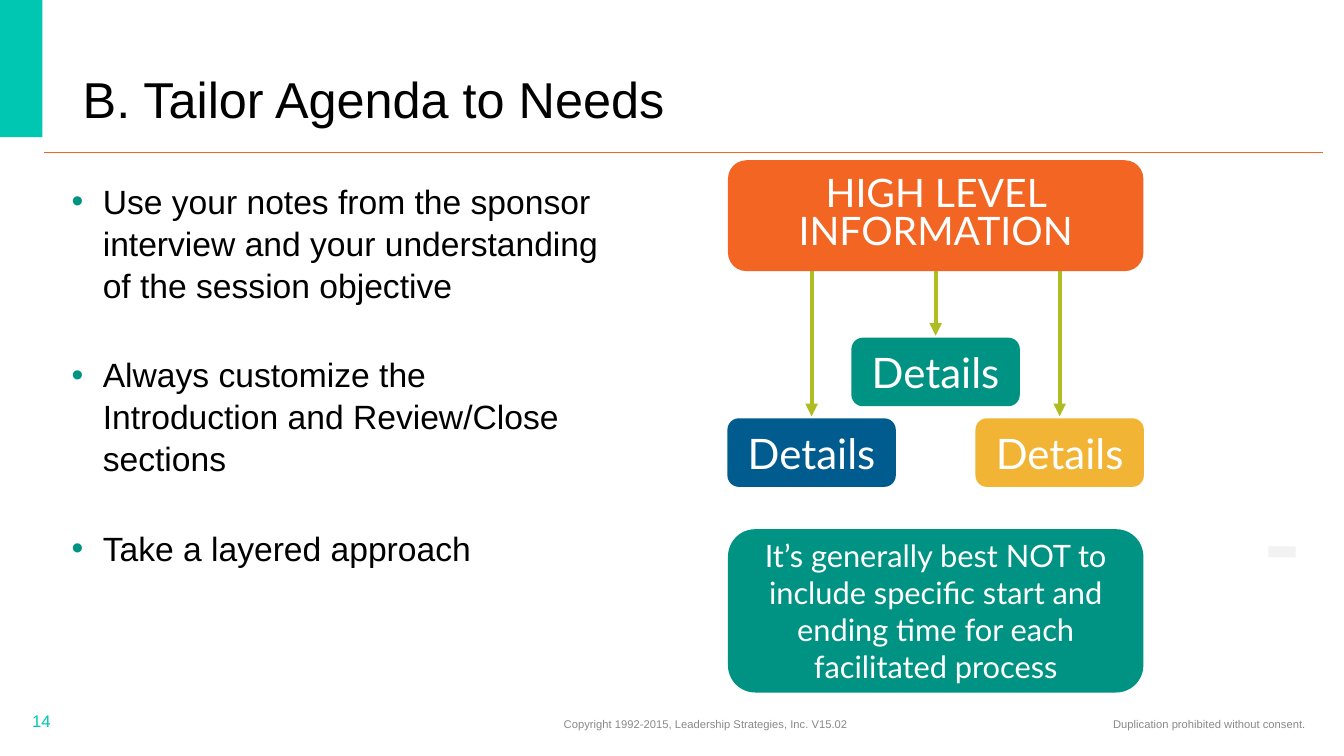
from lxml.etree import SubElement
from pptx import Presentation
from pptx.dml.color import RGBColor
from pptx.enum.shapes import MSO_CONNECTOR as Connector, MSO_SHAPE as Preset
from pptx.enum.text import MSO_ANCHOR as Anchor, MSO_AUTO_SIZE as AutoSize, PP_ALIGN as Align
from pptx.oxml.ns import qn
from pptx.util import Inches, Pt

TEAL = RGBColor(0x00, 0x93, 0x83)
AQUA = RGBColor(0x00, 0xC7, 0xB1)
ORANGE = RGBColor(0xF2, 0x65, 0x22)
BLUE = RGBColor(0x00, 0x5B, 0x8E)
GOLD = RGBColor(0xF1, 0xB4, 0x34)
LIME = RGBColor(0xAF, 0xBD, 0x22)
GRAY = RGBColor(0x89, 0x89, 0x89)
PALE = RGBColor(0xF2, 0xF2, 0xF2)
WHITE = RGBColor(0xFF, 0xFF, 0xFF)
BLACK = RGBColor(0x00, 0x00, 0x00)

# Diagram grid: three column centres, one wide box spanning all of them
CENTERS = [8.05 + 1.23 * column for column in range(3)]
MIDDLE = CENTERS[1]
WIDE, NARROW, DETAIL_HEIGHT = 4.12, 1.67, 0.68
HEAD_TOP, HEAD_HEIGHT = 1.59, 1.1
UPPER_ROW, LOWER_ROW = 3.35, 4.15
NOTE_TOP, NOTE_HEIGHT = 5.25, 1.62

BULLETS = [
    "Use your notes from the sponsor interview and your understanding of the session objective",
    "Always customize the Introduction and Review/Close sections",
    "Take a layered approach",
]


def add_run(paragraph, text, size, color, font="Arial"):
    run = paragraph.add_run()
    run.text = text
    run.font.size = Pt(size)
    run.font.name = font
    run.font.color.rgb = color


def add_block(slide, preset, left, top, width, height, color):
    shape = slide.shapes.add_shape(
        preset, Inches(left), Inches(top), Inches(width), Inches(height))
    shape.shadow.inherit = False
    shape.fill.solid()
    shape.fill.fore_color.rgb = color
    shape.line.fill.background()
    return shape


def add_card(slide, center, top, width, height, color, text, size, spacing=None):
    """Add a rounded box with white centred text around a column centre."""
    card = add_block(slide, Preset.ROUNDED_RECTANGLE,
                     center - width / 2, top, width, height, color)
    frame = card.text_frame
    frame.word_wrap = True
    frame.vertical_anchor = Anchor.MIDDLE
    frame.margin_left = frame.margin_right = Inches(0.08)
    frame.margin_top = frame.margin_bottom = Inches(0.04)
    paragraph = frame.paragraphs[0]
    paragraph.alignment = Align.CENTER
    if spacing:
        paragraph.line_spacing = spacing
    add_run(paragraph, text, size, WHITE, "Lato")


def add_line(slide, start, end, color, width, arrow=False):
    line = slide.shapes.add_connector(
        Connector.STRAIGHT, *(Inches(value) for value in start + end))
    line.line.color.rgb = color
    line.line.width = Pt(width)
    if arrow:
        SubElement(line.line._get_or_add_ln(), qn("a:tailEnd"), type="triangle")
    SubElement(line._element.spPr, qn("a:effectLst"))


def add_footer(slide, left, top, width, text, size, color, alignment):
    box = slide.shapes.add_textbox(
        Inches(left), Inches(top), Inches(width), Inches(0.4))
    frame = box.text_frame
    frame.word_wrap = True
    frame.vertical_anchor = Anchor.MIDDLE
    paragraph = frame.paragraphs[0]
    paragraph.alignment = alignment
    add_run(paragraph, text, size, color)


def place(placeholder, left, top, width, height, anchor):
    placeholder.left, placeholder.top = Inches(left), Inches(top)
    placeholder.width, placeholder.height = Inches(width), Inches(height)
    frame = placeholder.text_frame
    frame.word_wrap = True
    frame.auto_size = AutoSize.NONE
    frame.vertical_anchor = anchor
    return frame


def add_bullet(paragraph):
    properties = paragraph._p.get_or_add_pPr()
    properties.set("marL", str(Inches(0.31)))
    properties.set("indent", str(-Inches(0.31)))
    bullet_color = SubElement(properties, qn("a:buClr"))
    SubElement(bullet_color, qn("a:srgbClr"), val=str(TEAL))
    SubElement(properties, qn("a:buFont"), typeface="Arial")
    SubElement(properties, qn("a:buChar"), char="•")


def fill_title(slide):
    frame = place(slide.shapes.title, 0.72, 0.57, 8.12, 0.76, Anchor.BOTTOM)
    paragraph = frame.paragraphs[0]
    paragraph.alignment = Align.LEFT
    paragraph.line_spacing = 0.9
    add_run(paragraph, "B. Tailor Agenda to Needs", 36, BLACK)


def fill_body(slide):
    frame = place(slide.placeholders[1], 0.61, 1.73, 5.51, 5.03, Anchor.TOP)
    for index, text in enumerate(BULLETS):
        paragraph = frame.add_paragraph() if index else frame.paragraphs[0]
        add_bullet(paragraph)
        paragraph.line_spacing = 1.04
        paragraph.space_before = Pt(16 if index else 0)
        paragraph.space_after = Pt(18)
        add_run(paragraph, text, 24, BLACK)


def add_diagram(slide):
    add_card(slide, MIDDLE, HEAD_TOP, WIDE, HEAD_HEIGHT, ORANGE,
             "HIGH LEVEL INFORMATION", 28, Pt(26.6))
    details = zip(CENTERS, (LOWER_ROW, UPPER_ROW, LOWER_ROW), (BLUE, TEAL, GOLD))
    for center, top, color in details:
        add_card(slide, center, top, NARROW, DETAIL_HEIGHT, color, "Details", 30)
        add_line(slide, (center, HEAD_TOP + HEAD_HEIGHT), (center, top - 0.02),
                 LIME, 3, arrow=True)
    add_card(slide, MIDDLE, NOTE_TOP, WIDE, NOTE_HEIGHT, TEAL,
             "It’s generally best NOT to include specific start and ending time "
             "for each facilitated process", 22)


def main():
    presentation = Presentation()
    presentation.slide_width, presentation.slide_height = Inches(13.33), Inches(7.5)
    slide = presentation.slides.add_slide(presentation.slide_layouts[1])
    add_block(slide, Preset.RECTANGLE, -0.02, -0.02, 0.44, 1.38, AQUA)
    add_line(slide, (0.44, 1.51), (13.12, 1.51), ORANGE, 0.5)
    fill_title(slide)
    fill_body(slide)
    add_diagram(slide)
    add_block(slide, Preset.RECTANGLE, 12.58, 5.42, 0.27, 0.11, PALE)
    add_footer(slide, 0.22, 6.95, 3, "14", 12, AQUA, Align.LEFT)
    add_footer(slide, 3.62, 6.98, 6.76,
               "Copyright 1992-2015, Leadership Strategies, Inc. V15.02",
               8, GRAY, Align.CENTER)
    add_footer(slide, 7.42, 6.98, 5.63, "Duplication prohibited without consent.",
               8, GRAY, Align.RIGHT)
    presentation.save("out.pptx")


if __name__ == "__main__":
    main()
